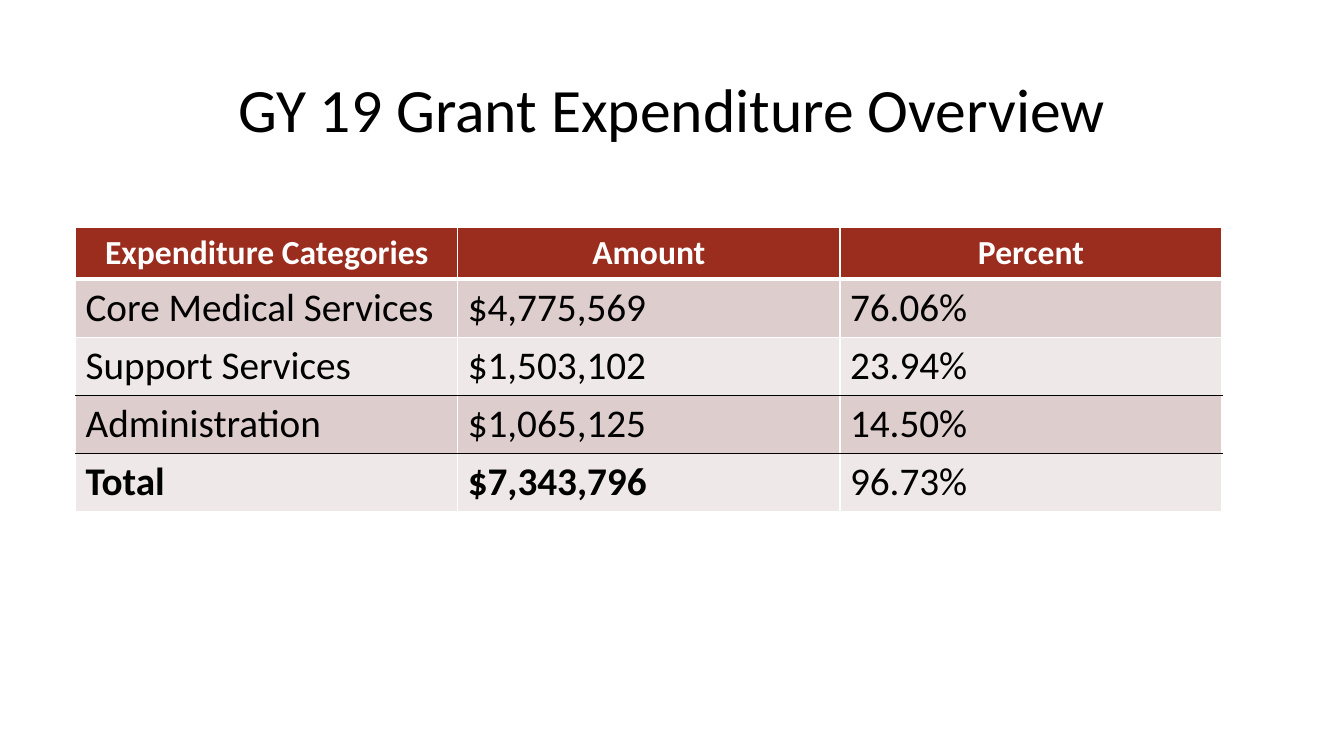
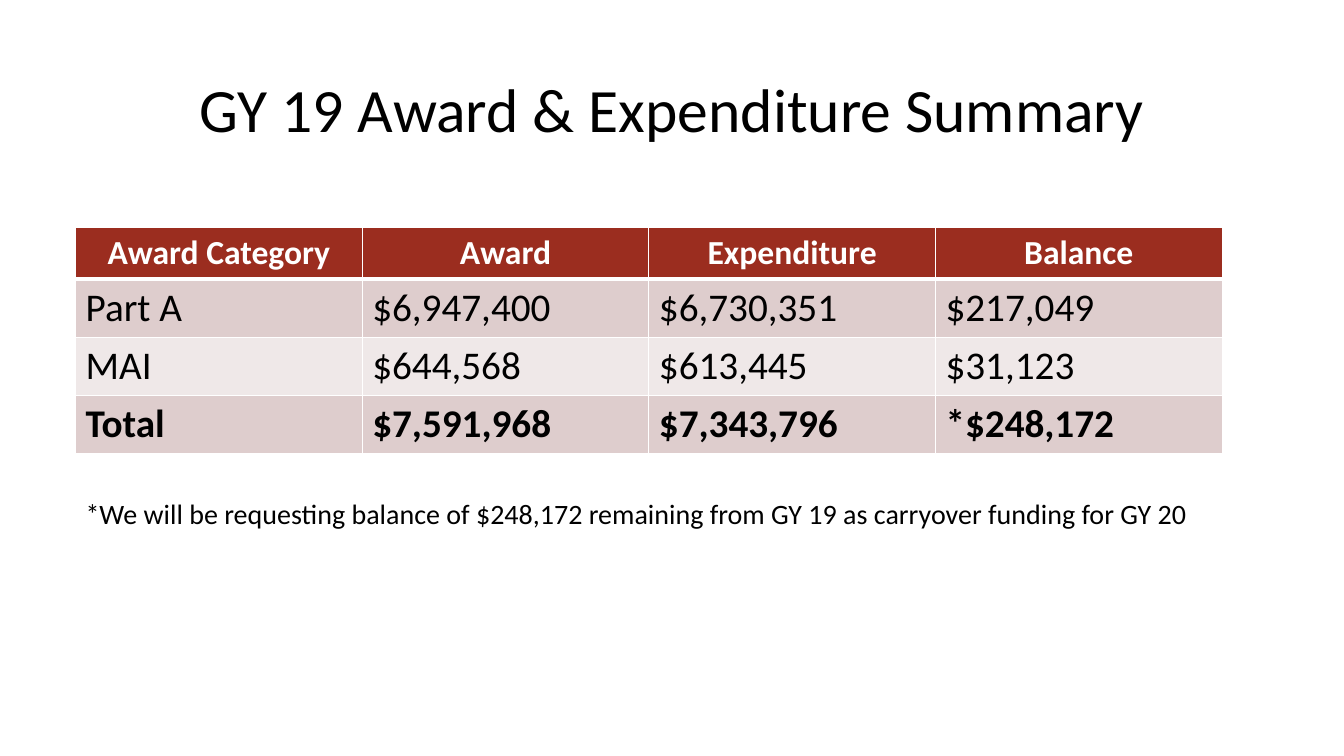
"""Build the two grant year 19 expenditure slides."""

from dataclasses import dataclass

from lxml import etree
from pptx import Presentation
from pptx import util as u
from pptx.dml.color import RGBColor
from pptx.enum import text
from pptx.oxml import ns

PX = 9525
FONT = "Calibri"
COLOURS = {
    "white": "FFFFFF",
    "black": "000000",
    "header": "9B2D1F",
    "odd_row": "DECDCD",
    "even_row": "EFE8E8",
}
TABLE_LEFT, TABLE_TOP, TABLE_WIDTH = 72, 217, 1092
HEADER_HEIGHT, ROW_HEIGHT = 49, 55


@dataclass(frozen=True)
class Style:
    size: int
    colour: str = "black"
    bold: bool = False
    align: text.PP_ALIGN = text.PP_ALIGN.LEFT


@dataclass(frozen=True)
class Summary:
    title: str
    rows: tuple[tuple[str, ...], ...]
    bold_totals: int
    ruled_rows: tuple[int, ...] = ()
    footnote: str = ""


TITLE = Style(44, align=text.PP_ALIGN.CENTER)
HEADER = Style(24, "white", True, text.PP_ALIGN.CENTER)
BODY = Style(28)
TOTAL = Style(28, bold=True)
FOOTNOTE = Style(20)

SUMMARIES = (
    Summary(
        "GY 19 Grant Expenditure Overview",
        (
            ("Expenditure Categories", "Amount", "Percent"),
            ("Core Medical Services", "$4,775,569", "76.06%"),
            ("Support Services", "$1,503,102", "23.94%"),
            ("Administration", "$1,065,125", "14.50%"),
            ("Total", "$7,343,796", "96.73%"),
        ),
        bold_totals=2,
        ruled_rows=(2, 3),
    ),
    Summary(
        "GY 19 Award & Expenditure Summary",
        (
            ("Award Category", "Award", "Expenditure", "Balance"),
            ("Part A", "$6,947,400", "$6,730,351", "$217,049"),
            ("MAI", "$644,568", "$613,445", "$31,123"),
            ("Total", "$7,591,968", "$7,343,796", "*$248,172"),
        ),
        bold_totals=4,
        footnote="*We will be requesting balance of $248,172 remaining "
        "from GY 19 as carryover funding for GY 20",
    ),
)


def px(*lengths: int) -> list[u.Emu]:
    return [u.Emu(length * PX) for length in lengths]


def rgb(name: str) -> RGBColor:
    return RGBColor.from_string(COLOURS[name])


def write(frame, wording: str, style: Style) -> None:
    frame.text = wording
    para = frame.paragraphs[0]
    para.alignment = style.align
    para.font.name = FONT
    para.font.size = u.Pt(style.size)
    para.font.bold = style.bold
    para.font.color.rgb = rgb(style.colour)


def add_border(cell, position: int, side: str, colour: str, points: int) -> None:
    line = etree.Element(ns.qn(f"a:ln{side}"), w=str(u.Pt(points)))
    fill = etree.SubElement(line, ns.qn("a:solidFill"))
    etree.SubElement(fill, ns.qn("a:srgbClr"), val=COLOURS[colour])
    cell._tc.get_or_add_tcPr().insert(position, line)


def add_title(page, wording: str) -> None:
    title = page.shapes.title
    title.left, title.top, title.width, title.height = px(88, 38, 1104, 139)
    frame = title.text_frame
    frame.word_wrap = True
    frame.auto_size = text.MSO_AUTO_SIZE.NONE
    frame.vertical_anchor = text.MSO_ANCHOR.MIDDLE
    write(frame, wording, TITLE)
    frame.paragraphs[0].line_spacing = 0.9


def format_cell(cell, summary: Summary, row: int, column: int) -> None:
    is_total = row == len(summary.rows) - 1 and column < summary.bold_totals
    style = HEADER if row == 0 else TOTAL if is_total else BODY
    write(cell.text_frame, summary.rows[row][column], style)
    fill = "header" if row == 0 else "odd_row" if row % 2 else "even_row"
    cell.fill.solid()
    cell.fill.fore_color.rgb = rgb(fill)
    above = "black" if row - 1 in summary.ruled_rows else "white"
    below = "black" if row in summary.ruled_rows else "white"
    borders = (
        ("L", "white", 1),
        ("R", "white", 1),
        ("T", above, 3 if row == 1 else 1),
        ("B", below, 3 if row == 0 else 1),
    )
    for position, border in enumerate(borders):
        add_border(cell, position, *border)


def add_summary_table(page, summary: Summary) -> None:
    rows, columns = len(summary.rows), len(summary.rows[0])
    height = HEADER_HEIGHT + (rows - 1) * ROW_HEIGHT
    bounds = px(TABLE_LEFT, TABLE_TOP, TABLE_WIDTH, height)
    table = page.shapes.add_table(rows, columns, *bounds).table
    for column in table.columns:
        column.width = px(TABLE_WIDTH // columns)[0]
    for row, table_row in enumerate(table.rows):
        table_row.height = px(ROW_HEIGHT if row else HEADER_HEIGHT)[0]
        for column, cell in enumerate(table_row.cells):
            format_cell(cell, summary, row, column)


def add_footnote(page, wording: str) -> None:
    box = page.shapes.add_textbox(*px(TABLE_LEFT, 468, TABLE_WIDTH, 42))
    box.text_frame.word_wrap = True
    write(box.text_frame, wording, FOOTNOTE)


def main() -> None:
    deck = Presentation()
    deck.slide_width, deck.slide_height = px(1280, 720)
    for summary in SUMMARIES:
        page = deck.slides.add_slide(deck.slide_layouts.get_by_name("Title Only"))
        add_title(page, summary.title)
        add_summary_table(page, summary)
        if summary.footnote:
            add_footnote(page, summary.footnote)
    deck.save("out.pptx")


if __name__ == "__main__":
    main()
